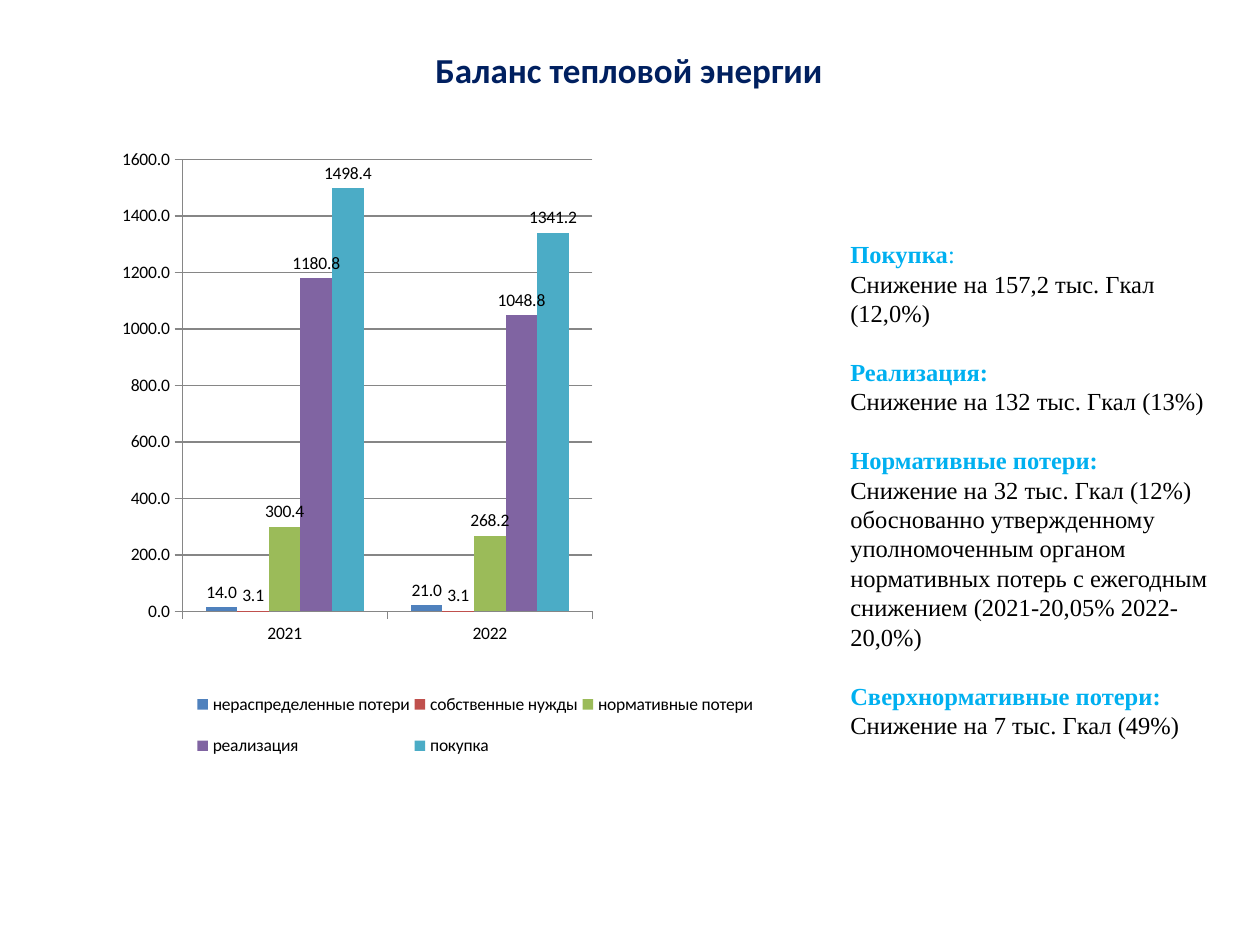
"""Build the slide on the heat energy balance."""
from lxml.etree import SubElement
from pptx import Presentation
from pptx.chart.data import CategoryChartData
from pptx.dml.color import RGBColor
from pptx.enum.chart import XL_CHART_TYPE, XL_LABEL_POSITION, XL_LEGEND_POSITION, XL_TICK_MARK
from pptx.enum.text import MSO_ANCHOR, PP_ALIGN
from pptx.oxml.ns import qn
from pptx.util import Pt

NAVY = RGBColor(0x00, 0x20, 0x60)
SKY = RGBColor(0x00, 0xB0, 0xF0)
BLACK = RGBColor(0x00, 0x00, 0x00)
GRAY = RGBColor(0x86, 0x86, 0x86)

YEARS = ["2021", "2022"]
BALANCE = [
    ("нераспределенные потери", (14.0, 21.0), RGBColor(0x4F, 0x81, 0xBD)),
    ("собственные нужды", (3.1, 3.1), RGBColor(0xC0, 0x50, 0x4D)),
    ("нормативные потери", (300.4, 268.2), RGBColor(0x9B, 0xBB, 0x59)),
    ("реализация", (1180.8, 1048.8), RGBColor(0x80, 0x64, 0xA2)),
    ("покупка", (1498.4, 1341.2), RGBColor(0x4B, 0xAC, 0xC6)),
]
CHANGES = [
    ("Покупка", ":", "Снижение на 157,2 тыс. Гкал (12,0%)"),
    ("Реализация:", "", "Снижение на 132 тыс. Гкал (13%)"),
    ("Нормативные потери:", "",
     "Снижение на 32 тыс. Гкал (12%) обоснованно утвержденному уполномоченным органом "
     "нормативных потерь с ежегодным снижением (2021-20,05% 2022-20,0%)"),
    ("Сверхнормативные потери:", "", "Снижение на 7 тыс. Гкал (49%)"),
]


def style_font(font, name, size, color, bold=False):
    font.name = name
    font.size = Pt(size)
    font.bold = bold
    font.color.rgb = color


def add_text_frame(slide, left, top, width, height):
    frame = slide.shapes.add_textbox(Pt(left), Pt(top), Pt(width), Pt(height)).text_frame
    frame.word_wrap = True
    return frame


def add_title(slide, wording):
    title = add_text_frame(slide, 1.5, 0, 716, 80)
    title.vertical_anchor = MSO_ANCHOR.MIDDLE
    title.text = wording
    heading = title.paragraphs[0]
    heading.alignment = PP_ALIGN.CENTER
    style_font(heading.runs[0].font, "Calibri", 20, NAVY, True)


def add_run(paragraph, wording, color, bold=False):
    run = paragraph.add_run()
    run.text = wording
    style_font(run.font, "Times New Roman", 14, color, bold)


def add_changes(slide):
    commentary = add_text_frame(slide, 478.8, 133.2, 226, 296)
    for index, (topic, suffix, change) in enumerate(CHANGES):
        heading = commentary.add_paragraph() if index else commentary.paragraphs[0]
        if index:
            heading.space_before = Pt(16.8)
        add_run(heading, topic, SKY, True)
        if suffix:
            add_run(heading, suffix, SKY)
        add_run(commentary.add_paragraph(), change, BLACK)


def set_layout(parent, position, x, y, width, height, inner=False):
    for old in parent.findall(qn("c:layout")):
        parent.remove(old)
    layout = SubElement(parent, qn("c:layout"))
    parent.insert(position, layout)
    manual = SubElement(layout, qn("c:manualLayout"))
    settings = [("layoutTarget", "inner")] if inner else []
    settings += [("xMode", "edge"), ("yMode", "edge"),
                 ("x", x), ("y", y), ("w", width), ("h", height)]
    for tag, value in settings:
        SubElement(manual, qn(f"c:{tag}")).set("val", str(value))


def style_axes(chart):
    for axis in (chart.category_axis, chart.value_axis):
        axis.major_tick_mark = XL_TICK_MARK.OUTSIDE
        axis.minor_tick_mark = XL_TICK_MARK.NONE
        axis.format.line.color.rgb = GRAY
        axis.format.line.width = Pt(0.75)
    values = chart.value_axis
    values.minimum_scale, values.maximum_scale, values.major_unit = 0, 1600, 200
    values.has_major_gridlines = True
    values.major_gridlines.format.line.color.rgb = GRAY
    values.major_gridlines.format.line.width = Pt(0.75)
    values.tick_labels.number_format = "0.0"
    values.tick_labels.number_format_is_linked = False


def style_series(plot):
    plot.gap_width = 150
    plot.overlap = 0
    plot.vary_by_categories = False
    for series, (_, _, color) in zip(plot.series, BALANCE):
        series.format.fill.solid()
        series.format.fill.fore_color.rgb = color
        series.invert_if_negative = False
        labels = series.data_labels
        labels.show_value = True
        labels.number_format = "0.0"
        labels.number_format_is_linked = False
        labels.position = XL_LABEL_POSITION.OUTSIDE_END


def add_balance_chart(slide):
    balance = CategoryChartData(number_format="0.0")
    balance.categories = YEARS
    for name, values, _ in BALANCE:
        balance.add_series(name, values)
    chart = slide.shapes.add_chart(
        XL_CHART_TYPE.COLUMN_CLUSTERED, Pt(59.8), Pt(82), Pt(385), Pt(398), balance).chart
    chart.has_title = False
    style_font(chart.font, "Calibri", 10, BLACK)
    style_axes(chart)
    style_series(chart.plots[0])
    chart.has_legend = True
    legend = chart.legend
    legend.position = XL_LEGEND_POSITION.RIGHT
    legend.include_in_layout = False
    plot_area = chart.plots[0]._element.getparent()
    set_layout(plot_area, 0, 0.115, 0.023, 0.609, 0.649, inner=True)
    set_layout(legend._element, 1, 0.13, 0.76, 0.84, 0.15)


def main():
    deck = Presentation()
    deck.slide_width, deck.slide_height = Pt(720), Pt(540)
    slide = deck.slides.add_slide(deck.slide_layouts[6])
    add_changes(slide)
    add_title(slide, "Баланс тепловой энергии")
    add_balance_chart(slide)
    deck.save("out.pptx")


if __name__ == "__main__":
    main()
